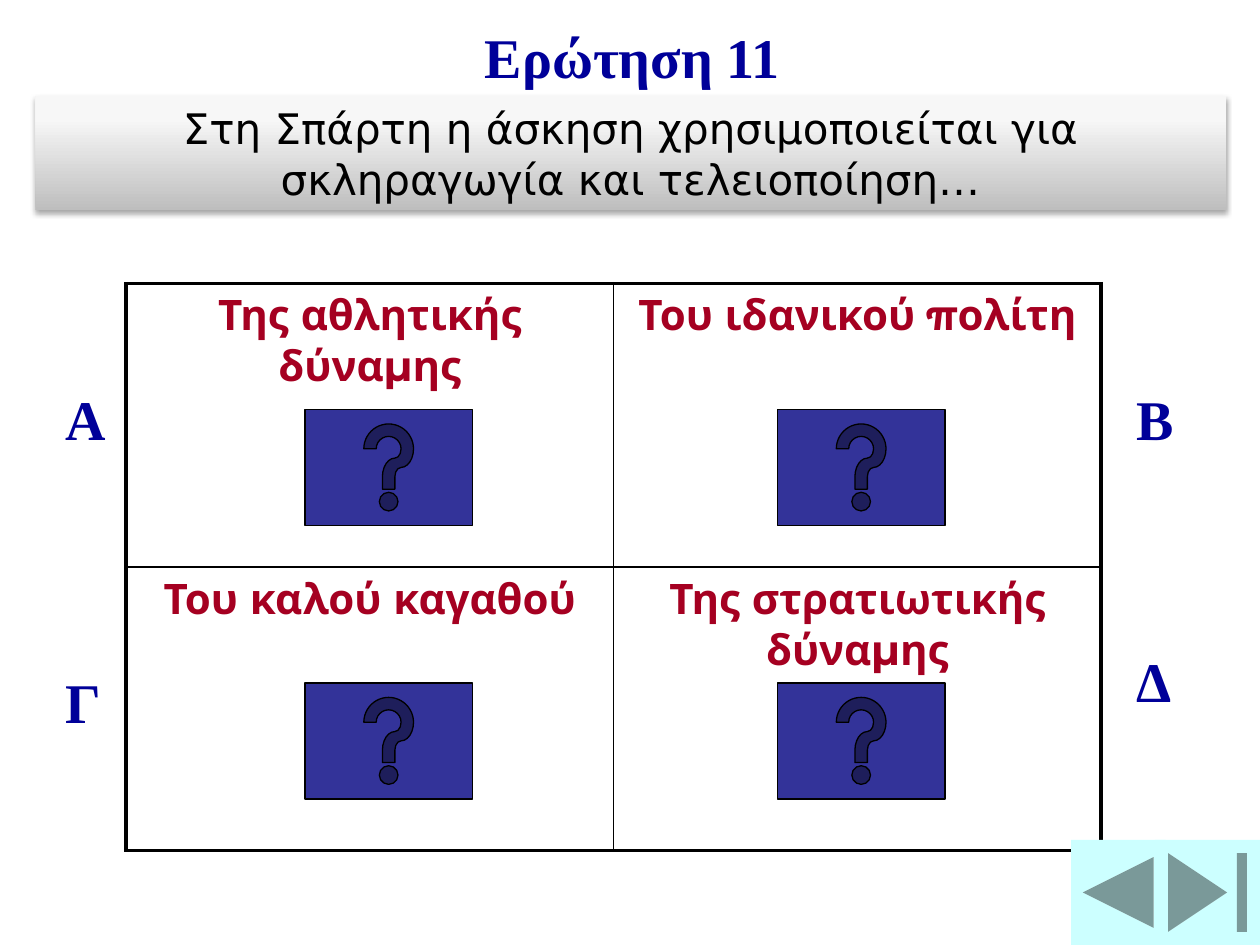
from lxml import etree
from pptx import Presentation, util as u
from pptx.dml.color import RGBColor
from pptx.enum import shapes, text
from pptx.oxml import parse_xml
from pptx.oxml.ns import qn

WIDE, HIGH = 10, 7.5
BLACK = RGBColor(0, 0, 0)
WHITE = RGBColor(0xFF, 0xFF, 0xFF)
NAVY = RGBColor(0, 0, 0x99)
RED = RGBColor(0xA5, 0, 0x21)
INDIGO = RGBColor(0x33, 0x33, 0x99)
CYAN = RGBColor(0xCC, 0xFF, 0xFF)
DARK = RGBColor(0xBE, 0xBE, 0xBE)
PALE = RGBColor(0xF7, 0xF7, 0xF7)

ANSWERS = [["Της αθλητικής δύναμης", "Του ιδανικού πολίτη"],
           ["Του καλού καγαθού", "Της στρατιωτικής δύναμης"]]
LETTERS = [["Α", "Β"], ["Γ", "Δ"]]
LETTER_TOPS = [[3, 3], [5.25, 5.08]]
LEFT, TOP, COL, ROW = 1, 2.25, 3.87, 2.25
THICK, THIN = 2.25, 1
KIND = shapes.MSO_SHAPE
CENTER = text.PP_ALIGN.CENTER
SHADOW = """<a:effectLst
 xmlns:a="http://schemas.openxmlformats.org/drawingml/2006/main">
 <a:outerShdw blurRad="39370" dist="22860" dir="5400000" rotWithShape="0">
 <a:srgbClr val="000000"><a:alpha val="35000"/></a:srgbClr>
 </a:outerShdw></a:effectLst>"""


def box(*sizes):
    return [u.Inches(size) for size in sizes]


def write(frame, words, face, size, color, bold=False, align=None):
    frame.word_wrap = True
    para = frame.paragraphs[0]
    para.text = words
    para.alignment = align
    font = para.font
    font.name, font.size, font.bold = face, u.Pt(size), bold
    font.color.rgb = color


def label(slide, words, left, top, width):
    item = slide.shapes.add_textbox(*box(left, top, width, 0.63))
    write(item.text_frame, words, "Times New Roman", 32, NAVY, True)


def button(slide, kind, place, fill, line=None):
    item = slide.shapes.add_shape(kind, *box(*place))
    item.shadow.inherit = False
    item.fill.solid()
    item.fill.fore_color.rgb = fill
    if line is None:
        item.line.fill.background()
    else:
        item.line.color.rgb = line
        item.line.width = u.Pt(0.75)


def banner(slide, words):
    item = slide.shapes.add_shape(KIND.RECTANGLE, *box(0.28, 0.76, 9.45, 0.91))
    item.line.fill.background()
    item.fill.gradient()
    item.fill.gradient_angle = 90
    for stop, color, spot in zip(item.fill.gradient_stops, (DARK, PALE), (0, 0.8)):
        stop.color.rgb = color
        stop.position = spot
    item._element.spPr.append(parse_xml(SHADOW))
    write(item.text_frame, words, "DejaVu Sans", 24, BLACK, align=CENTER)


def border(cell, widths):
    """Draw black edges; widths maps L, R, T and B to points, in that order."""
    props = cell._tc.get_or_add_tcPr()
    for spot, (side, width) in enumerate(widths.items()):
        edge = etree.Element(qn(f"a:ln{side}"), w=str(u.Pt(width)))
        fill = etree.SubElement(edge, qn("a:solidFill"))
        etree.SubElement(fill, qn("a:srgbClr"), val=str(BLACK))
        props.insert(spot, edge)


def grid(slide):
    place = box(LEFT, TOP, 2 * COL, 2 * ROW)
    table = slide.shapes.add_table(2, 2, *place).table
    table.first_row = table.horz_banding = False
    for row, line in enumerate(ANSWERS):
        table.rows[row].height = u.Inches(ROW)
        for col, words in enumerate(line):
            table.columns[col].width = u.Inches(COL)
            cell = table.cell(row, col)
            cell.fill.solid()
            cell.fill.fore_color.rgb = WHITE
            write(cell.text_frame, words, "Montserrat", 24, RED, True, CENTER)
            border(cell, {"L": THIN if col else THICK,
                          "R": THICK if col else THIN,
                          "T": THIN if row else THICK,
                          "B": THICK if row else THIN})


def main():
    deck = Presentation()
    deck.slide_width, deck.slide_height = box(WIDE, HIGH)
    slide = deck.slides.add_slide(deck.slide_layouts[6])
    grid(slide)
    label(slide, "Ερώτηση 11", 3.75, 0.13, 2.67)
    for row in range(2):
        for col in range(2):
            label(slide, LETTERS[row][col], 0.42 + 8.5 * col,
                  LETTER_TOPS[row][col], 0.5)
            place = (2.42 + 3.75 * col, 3.25 + 2.17 * row, 1.33, 0.92)
            button(slide, KIND.ACTION_BUTTON_HELP, place, INDIGO, BLACK)
    side = HIGH / 9
    button(slide, KIND.ACTION_BUTTON_END,
           (WIDE - side, HIGH - side, side, side), CYAN)
    button(slide, KIND.ACTION_BUTTON_BACK_OR_PREVIOUS,
           (8.5, HIGH - side, 0.75, side), CYAN)
    banner(slide, "Στη Σπάρτη η άσκηση χρησιμοποιείται για "
                  "σκληραγωγία και τελειοποίηση…")
    deck.save("out.pptx")


if __name__ == "__main__":
    main()
